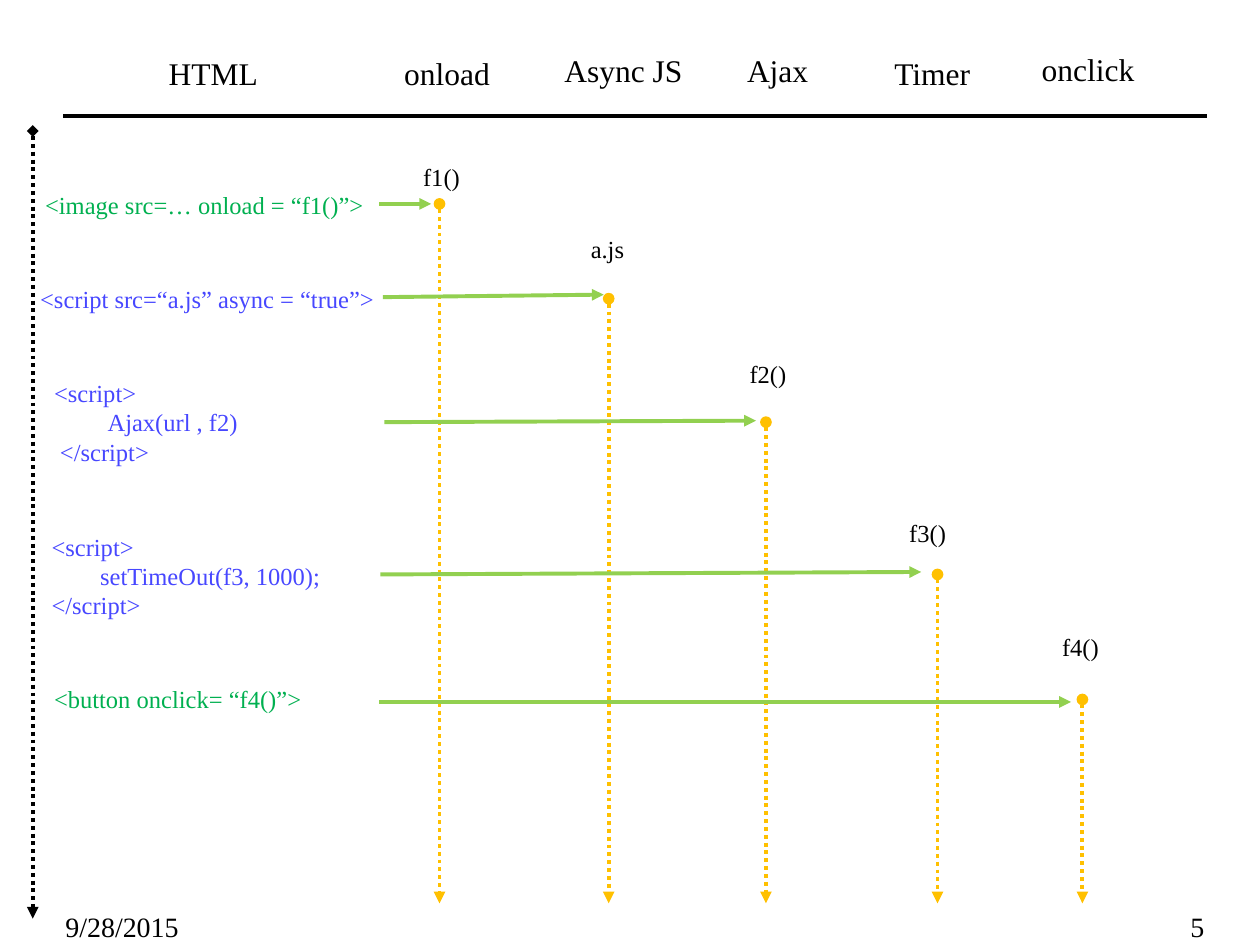
import pptx
import pptx.util
import pptx.dml.color
import pptx.enum.dml
import pptx.enum.shapes
import pptx.enum.text
import pptx.oxml.ns
from lxml import etree

Cm = pptx.util.Cm
Pt = pptx.util.Pt
ALIGN = pptx.enum.text.PP_ALIGN
FONT = "Times New Roman"
COLORS = {
    "text": "000000",
    "markup": "00B050",
    "script": "4747FF",
    "lane": "FFC000",
    "call": "92D050",
}
LANE_END = 18.21

HEADERS = [
    ("HTML", 3.15, 0.97, 2.74),
    ("onload", 7.9, 0.97, 2.44),
    ("Async JS", 11.13, 0.91, 3.05),
    ("Ajax", 14.81, 0.91, 2.18),
    ("Timer", 17.78, 0.97, 2.21),
    ("onclick", 20.75, 0.89, 2.44),
]
CODE = [
    ([("<image src=… onload = “f1()”>", 0)], 0.66, 3.71, 6.99, "markup"),
    ([("<script src=“a.js” async = “true”>", 0)], 0.56, 5.59, 7.62, "script"),
    ([("<script>", 0), ("Ajax(url , f2)", 1.08), ("</script>", 0.12)],
     0.84, 7.49, 6.99, "script"),
    ([("<script>", 0), ("setTimeOut(f3, 1000);", 0.98), ("</script>", 0)],
     0.79, 10.59, 6.99, "script"),
    ([("<button onclick= “f4()”>", 0)], 0.84, 13.67, 5.77, "markup"),
]
CALLBACKS = [
    ("f1()", 8.28, 3.15),
    ("a.js", 11.66, 4.6),
    ("f2()", 14.86, 7.11),
    ("f3()", 18.08, 10.31),
    ("f4()", 21.16, 12.62),
]
LANES = [(8.86, 4.11), (12.27, 6.02), (15.44, 8.51), (18.9, 11.58), (21.82, 14.1)]
CALLS = [
    (7.65, 4.11, 8.69, 4.11),
    (7.72, 5.99, 12.17, 5.94),
    (7.75, 8.51, 15.24, 8.48),
    (7.67, 11.58, 18.57, 11.53),
    (7.65, 14.15, 21.59, 14.15),
]


def rgb(name):
    return pptx.dml.color.RGBColor.from_string(COLORS[name])


def add_text(s, lines, x, y, w, size, color="text", align=ALIGN.LEFT):
    height = 0.25 + len(lines) * size * 0.0425
    tf = s.shapes.add_textbox(Cm(x), Cm(y), Cm(w), Cm(height)).text_frame
    tf.word_wrap = True
    for i, (text, indent) in enumerate(lines):
        p = tf.paragraphs[0] if i == 0 else tf.add_paragraph()
        p.text = text
        p.alignment = align
        p.font.name = FONT
        p.font.size = Pt(size)
        p.font.color.rgb = rgb(color)
        if indent:
            p._p.get_or_add_pPr().set("marL", str(Cm(indent)))


def add_line(s, x1, y1, x2, y2, color, width=2.25, dotted=False, head=None, tail=None):
    c = s.shapes.add_connector(
        pptx.enum.shapes.MSO_CONNECTOR.STRAIGHT, Cm(x1), Cm(y1), Cm(x2), Cm(y2))
    c.line.color.rgb = rgb(color)
    c.line.width = Pt(width)
    if dotted:
        c.line.dash_style = pptx.enum.dml.MSO_LINE.ROUND_DOT
    qn = pptx.oxml.ns.qn
    ln = c.line._get_or_add_ln()
    for tag, kind in (("a:headEnd", head), ("a:tailEnd", tail)):
        if kind:
            etree.SubElement(ln, qn(tag), type=kind)
    etree.SubElement(c._element.spPr, qn("a:effectLst"))


def main():
    prs = pptx.Presentation()
    prs.slide_width, prs.slide_height = Cm(25.4), Cm(19.05)
    s = prs.slides.add_slide(prs.slide_layouts[6])

    add_line(s, 1.27, 2.34, 24.33, 2.34, "text", width=2)
    add_text(s, [("9/28/2015", 0)], 1.07, 18.21, 5.28, 16)
    add_text(s, [("5", 0)], 19.25, 18.21, 5.28, 16, align=ALIGN.RIGHT)

    for text, x, y, w in HEADERS:
        add_text(s, [(text, 0)], x, y, w, 18)
    for lines, x, y, w, color in CODE:
        add_text(s, lines, x, y, w, 14, color)
    for text, x, y in CALLBACKS:
        add_text(s, [(text, 0)], x, y, 1.7, 14)

    for x, y in LANES:
        add_line(s, x, y, x, LANE_END, "lane", dotted=True, head="oval", tail="triangle")
    add_line(s, 0.66, 2.64, 0.66, 18.52, "text", dotted=True, head="diamond", tail="triangle")
    for call in CALLS:
        add_line(s, *call, "call", tail="triangle")

    prs.save("out.pptx")


if __name__ == "__main__":
    main()
